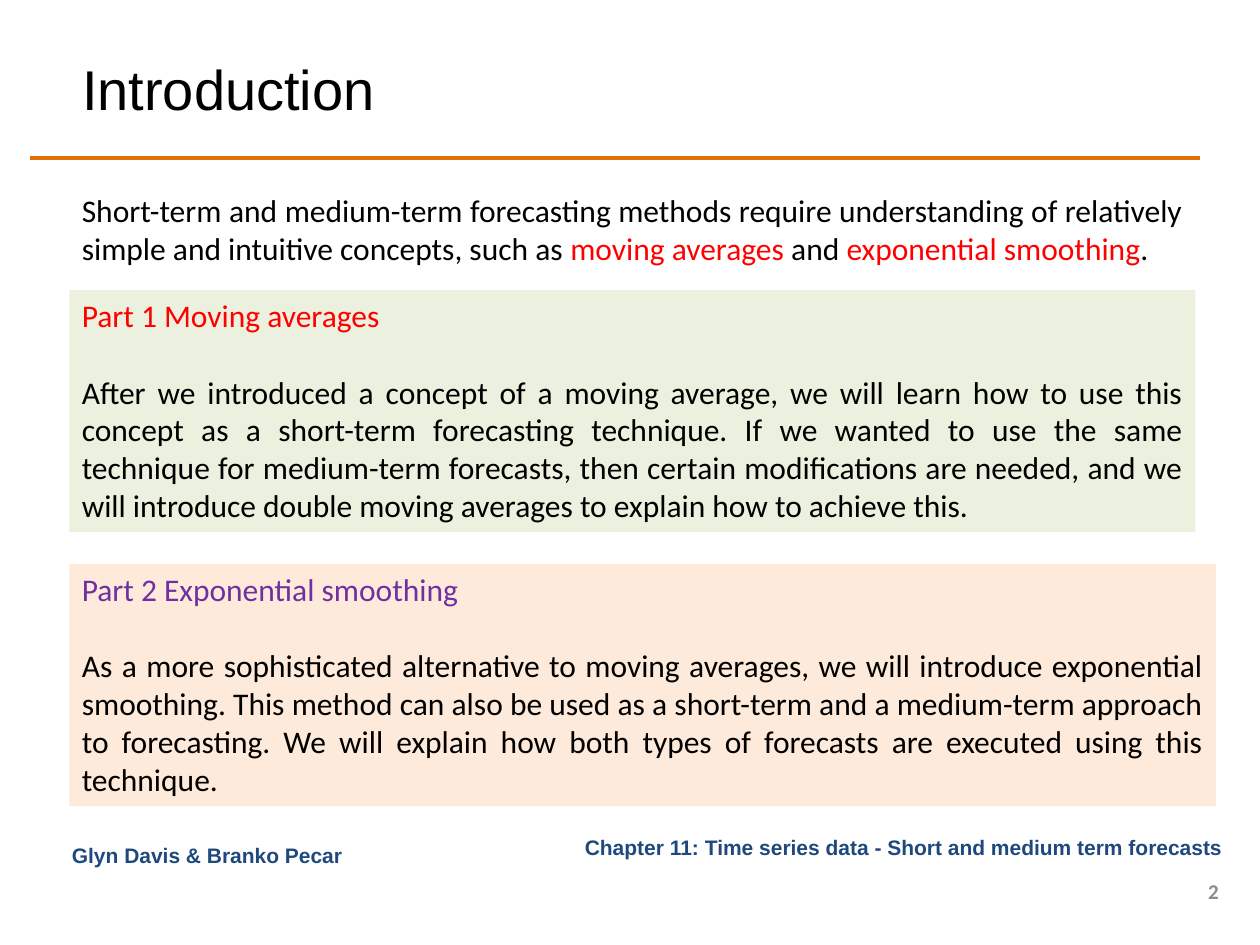
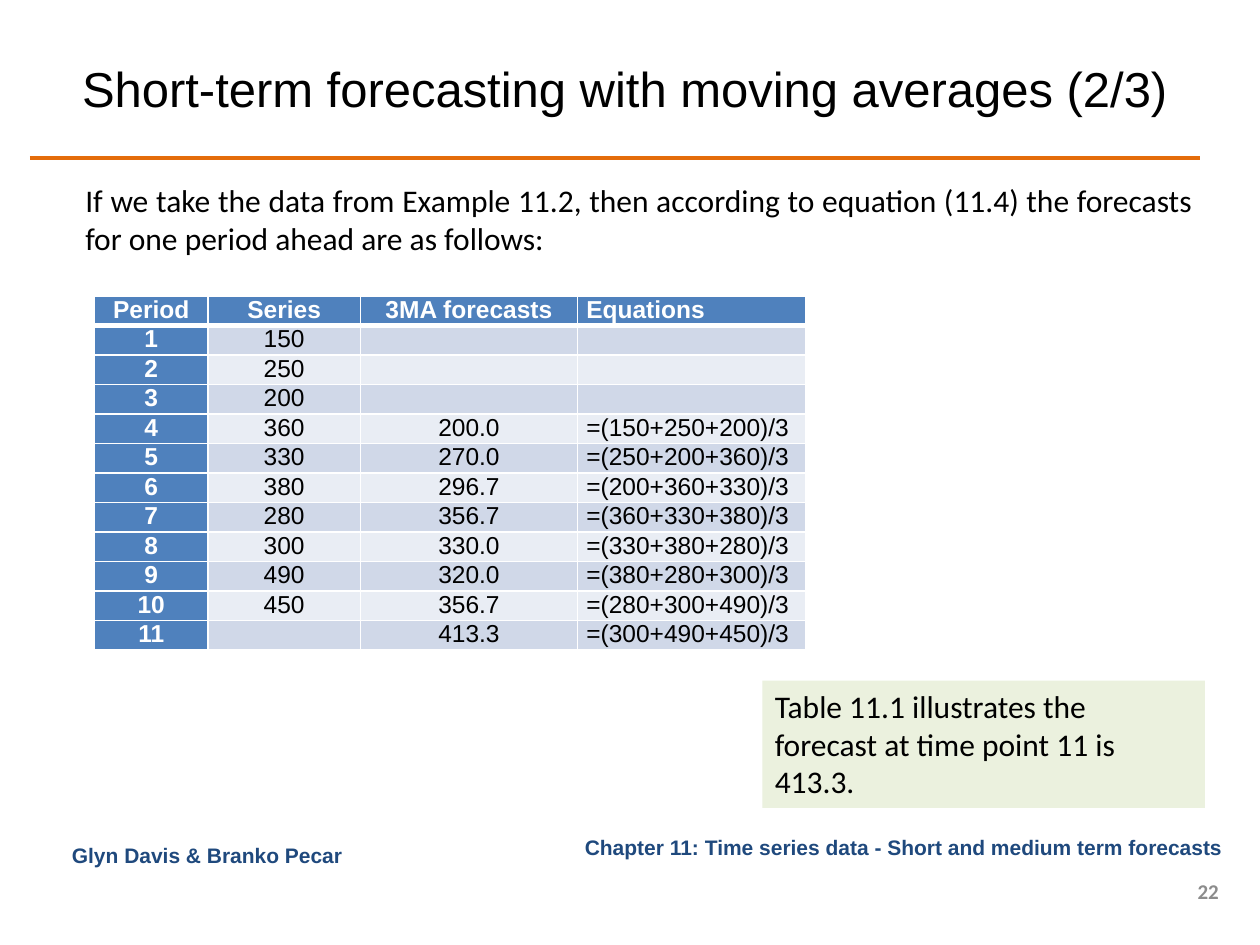
from lxml.etree import SubElement
from pptx import Presentation
from pptx.dml.color import RGBColor
from pptx.enum.shapes import MSO_CONNECTOR
from pptx.enum.text import MSO_ANCHOR, MSO_AUTO_SIZE, PP_ALIGN
from pptx.oxml import parse_xml
from pptx.oxml.ns import nsdecls, qn
from pptx.util import Cm, Pt

BLACK = RGBColor(0x00, 0x00, 0x00)
WHITE = RGBColor(0xFF, 0xFF, 0xFF)
RED = RGBColor(0xFF, 0x00, 0x00)
PURPLE = RGBColor(0x70, 0x30, 0xA0)
ORANGE = RGBColor(0xE4, 0x6C, 0x0A)
NAVY = RGBColor(0x1F, 0x49, 0x7D)
GREY = RGBColor(0x8C, 0x8C, 0x8C)
GREEN_PANEL = RGBColor(0xEB, 0xF1, 0xDE)
PEACH_PANEL = RGBColor(0xFD, 0xEA, 0xDA)
HEADER_BLUE = RGBColor(0x4F, 0x81, 0xBD)
BANDS = [RGBColor(0xE9, 0xED, 0xF4), RGBColor(0xD0, 0xD8, 0xE8)]


def add_run(p, text, size, color, font="Calibri", bold=False):
    r = p.add_run()
    r.text = text
    r.font.size = Pt(size)
    r.font.name = font
    r.font.bold = bold
    r.font.color.rgb = color


def add_text(s, box, paragraphs, size=18, font="Calibri", bold=False,
             align=PP_ALIGN.JUSTIFY, anchor=MSO_ANCHOR.TOP, fill=None):
    """Add a text box; each paragraph is a list of (text, colour) runs."""
    sp = s.shapes.add_textbox(*[Cm(v) for v in box])
    if fill is not None:
        sp.fill.solid()
        sp.fill.fore_color.rgb = fill
    tf = sp.text_frame
    tf.word_wrap = True
    tf.vertical_anchor = anchor
    for i, runs in enumerate(paragraphs):
        p = tf.add_paragraph() if i else tf.paragraphs[0]
        p.alignment = align
        if i:
            p.space_before = Pt(22)
        for text, color in runs:
            add_run(p, text, size, color, font, bold)


prs = Presentation()
prs.slide_width = Cm(25.4)
prs.slide_height = Cm(19.05)

# Shared title, rule and footers
slides = []
for title, title_size, title_width, number in [
    ("Introduction", 32, 19.25, "2"),
    ("Short-term forecasting with moving averages (2/3)", 28, 22.91, "22"),
]:
    s = prs.slides.add_slide(prs.slide_layouts[5])
    slides.append(s)

    sp = s.shapes.title
    sp.left, sp.top, sp.width, sp.height = Cm(1.4), Cm(0.79), Cm(title_width), Cm(1.98)
    tf = sp.text_frame
    tf.auto_size = MSO_AUTO_SIZE.NONE
    tf.vertical_anchor = MSO_ANCHOR.MIDDLE
    p = tf.paragraphs[0]
    p.alignment = PP_ALIGN.LEFT
    add_run(p, title, title_size, BLACK, "Arial")

    rule = s.shapes.add_connector(MSO_CONNECTOR.STRAIGHT, Cm(0.6), Cm(3.18), Cm(24.2), Cm(3.18))
    rule.line.color.rgb = ORANGE
    rule.line.width = Pt(2)
    SubElement(rule._element.spPr, qn("a:effectLst"))

    add_text(s, (10.9, 16.69, 14, 0.79),
             [[("Chapter 11: Time series data - Short and medium term forecasts", NAVY)]],
             12, "Arial", True, PP_ALIGN.RIGHT, MSO_ANCHOR.MIDDLE)
    add_text(s, (1.2, 16.87, 7.55, 0.79), [[("Glyn Davis & Branko Pecar", NAVY)]],
             12, "Arial", True, PP_ALIGN.LEFT)
    add_text(s, (23.62, 17.65, 1.2, 0.61), [[(number, GREY)]],
             12, "Calibri", True, PP_ALIGN.RIGHT, MSO_ANCHOR.MIDDLE)

# Slide 1: introduction and the two parts
s = slides[0]
add_text(s, (1.4, 3.73, 22.7, 1.8), [[
    ("Short-term and medium-term forecasting methods require understanding of relatively "
     "simple and intuitive concepts, such as ", BLACK),
    ("moving averages", RED),
    (" and ", BLACK),
    ("exponential smoothing", RED),
    (".", BLACK),
]])
for heading, color, text, top, width, fill in [
    ("Part 1 Moving averages", RED,
     "After we introduced a concept of a moving average, we will learn how to use this concept "
     "as a short-term forecasting technique. If we wanted to use the same technique for "
     "medium-term forecasts, then certain modifications are needed, and we will introduce "
     "double moving averages to explain how to achieve this.", 5.85, 22.7, GREEN_PANEL),
    ("Part 2 Exponential smoothing", PURPLE,
     "As a more sophisticated alternative to moving averages, we will introduce exponential "
     "smoothing. This method can also be used as a short-term and a medium-term approach to "
     "forecasting. We will explain how both types of forecasts are executed using this "
     "technique.", 11.37, 23.11, PEACH_PANEL),
]:
    add_text(s, (1.4, top, width, 4.88), [[(heading, color)], [(text, BLACK)]], fill=fill)

# Slide 2: lead-in sentence
s = slides[1]
add_text(s, (1.47, 3.53, 22.83, 1.8), [[
    ("If we take the data from Example 11.2, then according to equation (11.4) the forecasts "
     "for one period ahead are as follows:", BLACK)]])

# Slide 2: each forecast is the mean of the three preceding values
series = [150, 250, 200, 360, 330, 380, 280, 300, 490, 450]
rows = [["Period", "Series", "3MA forecasts", "Equations"]]
for i in range(len(series) + 1):
    value = str(series[i]) if i < len(series) else ""
    forecast = equation = ""
    if i >= 3:
        last_three = series[i - 3:i]
        forecast = f"{sum(last_three) / 3:.1f}"
        equation = f"=({'+'.join(map(str, last_three))})/3"
    rows.append([str(i + 1), value, forecast, equation])

# Slide 2: forecast table
col_widths = [2.28, 3.08, 4.37, 4.6]
row_height = 0.594
table = s.shapes.add_table(len(rows), len(col_widths), Cm(1.91), Cm(5.97),
                           Cm(sum(col_widths)), Cm(row_height * len(rows))).table
for column, width in zip(table.columns, col_widths):
    column.width = Cm(width)
for i, row in enumerate(rows):
    table.rows[i].height = Cm(row_height)
    for j, text in enumerate(row):
        cell = table.cell(i, j)
        heading = i == 0 or j == 0
        cell.margin_left = cell.margin_right = Cm(0.18)
        cell.margin_top = cell.margin_bottom = 0
        cell.fill.solid()
        cell.fill.fore_color.rgb = HEADER_BLUE if heading else BANDS[i % 2]
        p = cell.text_frame.paragraphs[0]
        p.alignment = PP_ALIGN.JUSTIFY if j == 3 else PP_ALIGN.CENTER
        if text:
            add_run(p, text, 14, WHITE if heading else BLACK, "Arial", heading)
        else:
            SubElement(p._p, qn("a:endParaRPr"), sz="1400")
        # White borders, thicker between the header row and the data
        tcPr = cell._tc.get_or_add_tcPr()
        for k, side in enumerate(["lnL", "lnR", "lnT", "lnB"]):
            thick = (i, side) in [(0, "lnB"), (1, "lnT")]
            tcPr.insert(k, parse_xml(
                f'<a:{side} {nsdecls("a")} w="{Pt(3 if thick else 1)}">'
                f'<a:solidFill><a:srgbClr val="{WHITE}"/></a:solidFill></a:{side}>'))

# Slide 2: conclusion
add_text(s, (15.37, 13.72, 8.92, 2.57),
         [[("Table 11.1 illustrates the forecast at time point 11 is 413.3.", BLACK)]],
         align=PP_ALIGN.LEFT, fill=GREEN_PANEL)

prs.save("out.pptx")
